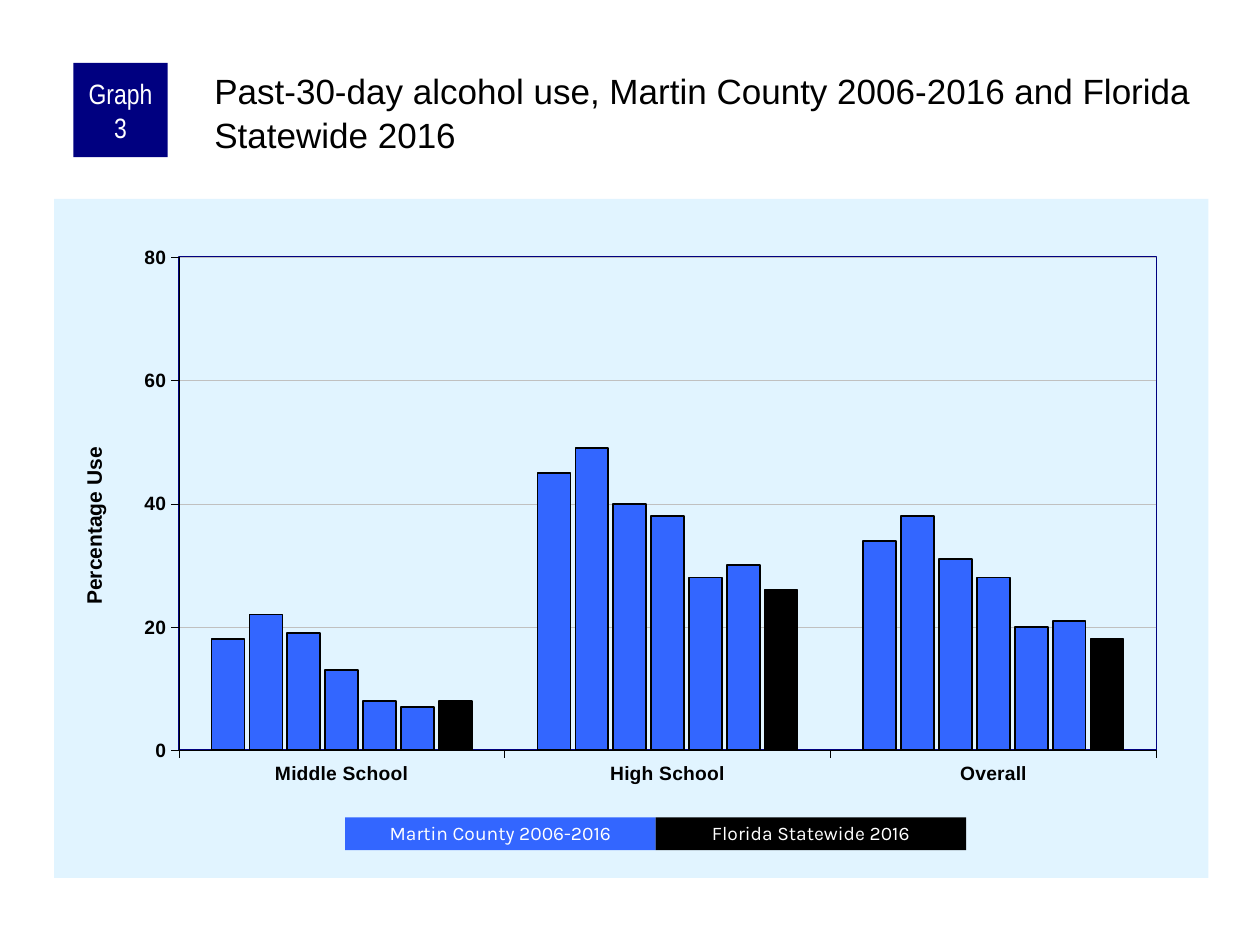
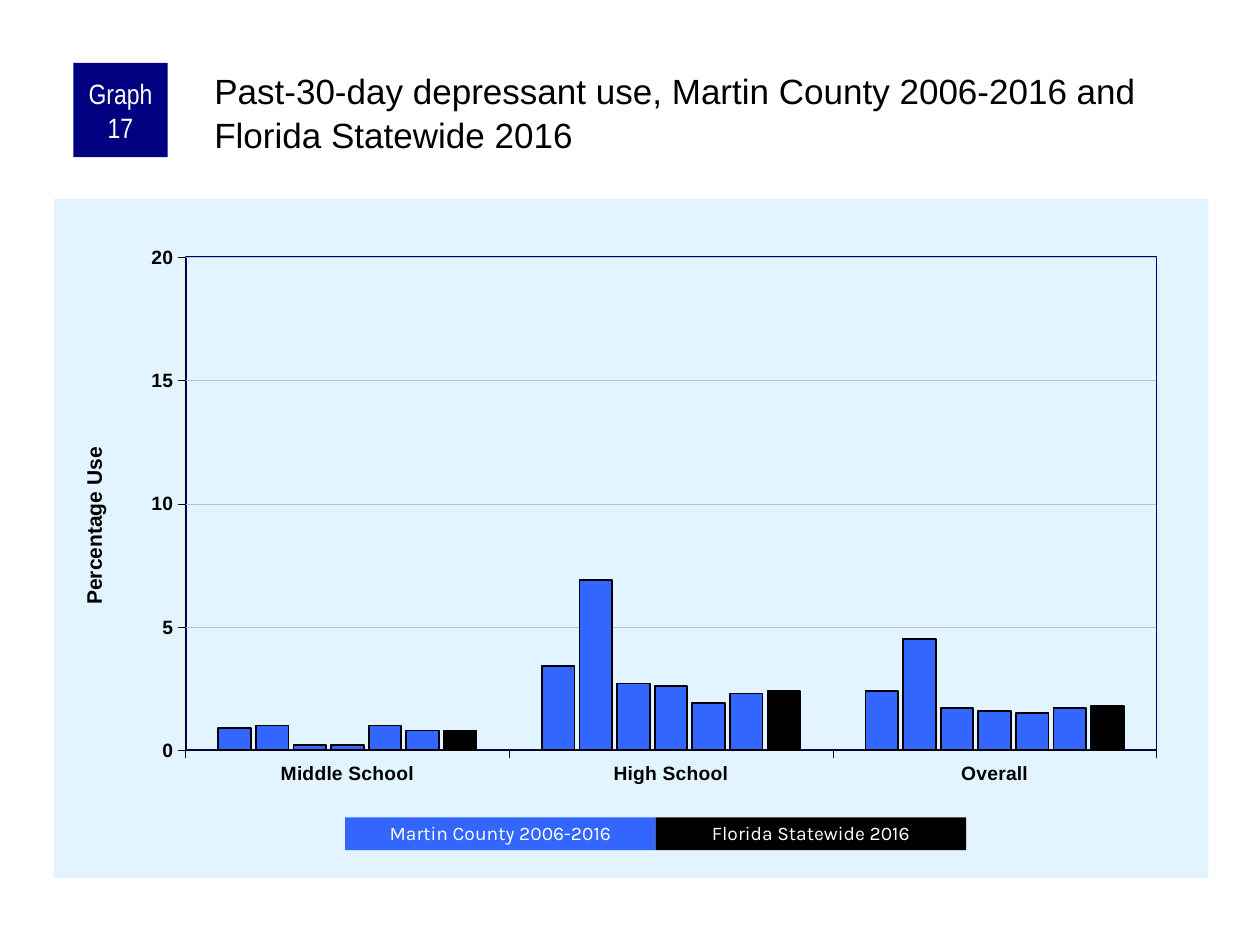
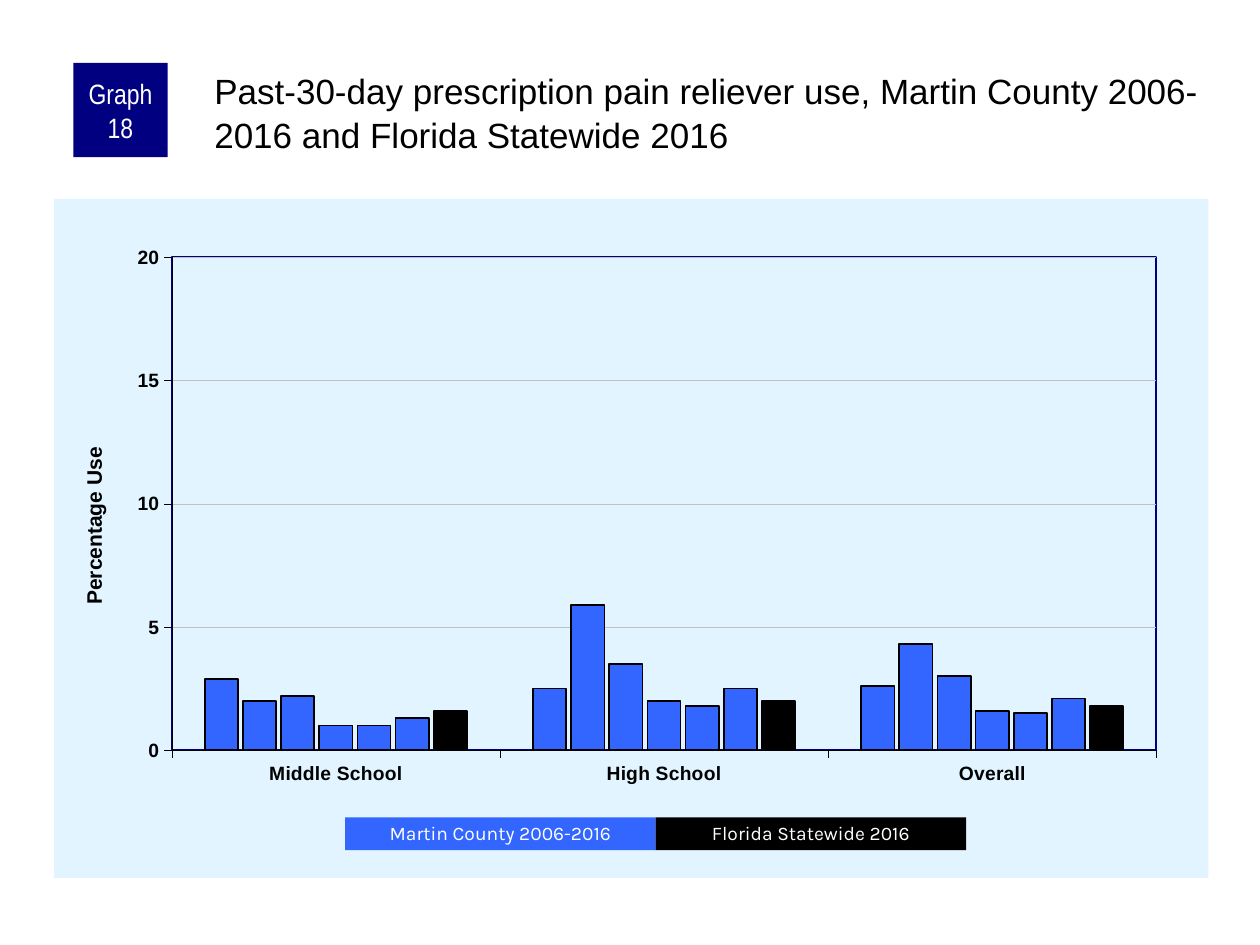
"""Build three slides of column charts on past-30-day substance use."""
from lxml import etree
from pptx import Presentation
from pptx import util as u
from pptx.chart.data import CategoryChartData
from pptx.dml.color import RGBColor
from pptx.enum import chart as charts, shapes, text
from pptx.oxml import parse_xml
from pptx.oxml.ns import nsdecls, qn

COLOURS = {
    "ink": "000000",
    "paper": "FFFFFF",
    "badge": "000080",
    "county": "3366FF",
    "state": "000000",
    "panel": "E1F4FF",
    "grid": "C0C0C0",
}
LEVELS = ["Middle School", "High School", "Overall"]
LEGEND = [("Martin County 2006-2016", "county"), ("Florida Statewide 2016", "state")]
GRAPHS = [
    {
        "number": 3, "substance": "alcohol", "top": 80, "step": 20, "plot_left": 0.108,
        "surveys": [(18, 45, 34), (22, 49, 38), (19, 40, 31), (13, 38, 28),
                    (8, 28, 20), (7, 30, 21), (8, 26, 18)],
    },
    {
        "number": 17, "substance": "depressant", "top": 20, "step": 5, "plot_left": 0.114,
        "surveys": [(0.9, 3.4, 2.4), (1, 6.9, 4.5), (0.2, 2.7, 1.7), (0.2, 2.6, 1.6),
                    (1, 1.9, 1.5), (0.8, 2.3, 1.7), (0.8, 2.4, 1.8)],
    },
    {
        "number": 18, "substance": "prescription pain reliever", "top": 20, "step": 5,
        "plot_left": 0.102,
        "surveys": [(2.9, 2.5, 2.6), (2, 5.9, 4.3), (2.2, 3.5, 3), (1, 2, 1.6),
                    (1, 1.8, 1.5), (1.3, 2.5, 2.1), (1.6, 2, 1.8)],
    },
]
PLOT_RIGHT = 0.955


def rgb(name):
    """Return the named colour."""
    return RGBColor.from_string(COLOURS[name])


def style_font(font, size, colour="ink", face="Arial", bold=False):
    """Set the look of a font."""
    font.size, font.name, font.bold = u.Pt(size), face, bold
    font.color.rgb = rgb(colour)


def write(frame, content, align=None, spacing=None, **font_format):
    """Write one formatted paragraph into a text frame."""
    frame.text = content
    paragraph = frame.paragraphs[0]
    paragraph.alignment = align
    paragraph.line_spacing = spacing
    style_font(paragraph.runs[0].font, **font_format)


def set_margins(frame, left, top, right, bottom):
    """Set the four text margins in centimetres."""
    frame.margin_left, frame.margin_top = u.Cm(left), u.Cm(top)
    frame.margin_right, frame.margin_bottom = u.Cm(right), u.Cm(bottom)


def add_box(slide, left, top, width, height, fill, content, **text_format):
    """Add a filled rectangle with centred text and return its text frame."""
    box = slide.shapes.add_shape(shapes.MSO_SHAPE.RECTANGLE, u.Cm(left), u.Cm(top),
                                 u.Cm(width), u.Cm(height))
    box.shadow.inherit = False
    box.fill.solid()
    box.fill.fore_color.rgb = rgb(fill)
    box.line.fill.background()
    frame = box.text_frame
    frame.word_wrap = True
    frame.vertical_anchor = text.MSO_ANCHOR.MIDDLE
    write(frame, content, align=text.PP_ALIGN.CENTER, colour="paper", **text_format)
    return frame


def set_title(slide, content):
    """Place and format the slide title."""
    title = slide.shapes.title
    title.left, title.top = u.Cm(4.24), u.Cm(1.27)
    title.width, title.height = u.Cm(20.12), u.Cm(2.11)
    frame = title.text_frame
    frame.word_wrap = True
    frame.auto_size = text.MSO_AUTO_SIZE.NONE
    frame.vertical_anchor = text.MSO_ANCHOR.TOP
    set_margins(frame, 0.08, 0.08, 0, 0)
    write(frame, content, align=text.PP_ALIGN.LEFT, spacing=1.05, size=20)


def set_layout(parent, index, **settings):
    """Give a chart part a manual layout."""
    for old in parent.findall(qn("c:layout")):
        parent.remove(old)
    layout = parse_xml(f"<c:layout {nsdecls('c')}><c:manualLayout/></c:layout>")
    for tag, value in settings.items():
        etree.SubElement(layout[0], qn(f"c:{tag}")).set("val", str(value))
    parent.insert(index, layout)


def area_format(fill, line):
    """Return the fill and outline of a chart area."""
    return parse_xml(f"<c:spPr {nsdecls('c', 'a')}>{fill}<a:ln w='12700'>{line}</a:ln></c:spPr>")


def solid(name):
    """Return a solid fill element as text."""
    return f"<a:solidFill><a:srgbClr val='{COLOURS[name]}'/></a:solidFill>"


def style_axis(axis):
    """Format the line, ticks and labels shared by both axes."""
    axis.major_tick_mark = charts.XL_TICK_MARK.OUTSIDE
    axis.minor_tick_mark = charts.XL_TICK_MARK.NONE
    axis.format.line.color.rgb = rgb("ink")
    axis.format.line.width = u.Pt(0.25)
    style_font(axis.tick_labels.font, 11, bold=True)


def style_value_axis(axis, top, step):
    """Format the percentage axis, its grid and its title."""
    style_axis(axis)
    axis.minimum_scale, axis.maximum_scale, axis.major_unit = 0, top, step
    axis.has_major_gridlines = True
    axis.major_gridlines.format.line.color.rgb = rgb("grid")
    axis.major_gridlines.format.line.width = u.Pt(0.25)
    axis_title = axis.axis_title
    write(axis_title.text_frame, "Percentage Use", size=12, bold=True)
    for body in axis_title.element.iter(qn("a:bodyPr")):
        body.set("rot", "-5400000")
        body.set("vert", "horz")
    set_layout(axis_title.element, 1, xMode="edge", yMode="edge", x=0.02, y=0.36)


def add_use_chart(slide, graph):
    """Add the clustered columns of one graph."""
    data = CategoryChartData()
    data.categories = LEVELS
    for number, shares in enumerate(graph["surveys"], 1):
        data.add_series(f"Series {number}", shares)
    chart = slide.shapes.add_chart(charts.XL_CHART_TYPE.COLUMN_CLUSTERED, u.Cm(1.09), u.Cm(4.01),
                                   u.Cm(23.27), u.Cm(13.69), data).chart
    chart.has_legend = chart.has_title = False
    style_font(chart.font, 8)
    columns = chart.plots[0]
    columns.gap_width, columns.overlap, columns.vary_by_categories = 200, -15, False
    for survey in columns.series:
        survey.format.fill.solid()
        is_state = survey.index == len(graph["surveys"]) - 1
        survey.format.fill.fore_color.rgb = rgb("state" if is_state else "county")
        survey.format.line.color.rgb = rgb("ink")
        survey.format.line.width = u.Pt(1)
    style_axis(chart.category_axis)
    style_value_axis(chart.value_axis, graph["top"], graph["step"])
    chart_root = chart.element.find(qn("c:chart"))
    chart_root.addnext(area_format(solid("panel"), "<a:noFill/>"))
    plot_area = chart_root.find(qn("c:plotArea"))
    plot_area.append(area_format("<a:noFill/>", solid("badge")))
    left = graph["plot_left"]
    set_layout(plot_area, 0, layoutTarget="inner", xMode="edge", yMode="edge",
               x=left, y=0.086, w=round(PLOT_RIGHT - left, 3), h=0.726)


def add_graph_slide(deck, graph):
    """Add a slide with badge, title, chart and legend."""
    slide = deck.slides.add_slide(deck.slide_layouts[5])
    set_title(slide, f"Past-30-day {graph['substance']} use, Martin County 2006-2016 "
                     "and Florida Statewide 2016")
    add_use_chart(slide, graph)
    badge = add_box(slide, 1.48, 1.27, 1.9, 1.9, "badge", f"Graph {graph['number']}",
                    size=16, face="Arial Narrow")
    set_margins(badge, 0.13, 0, 0.13, 0)
    for position, (label, fill) in enumerate(LEGEND):
        add_box(slide, 6.96 + position * 6.26, 16.48, 6.26, 0.66, fill, label,
                size=11, face="Karla", spacing=0.9)


def main():
    """Build and save the deck."""
    deck = Presentation()
    deck.slide_width, deck.slide_height = u.Cm(25.4), u.Cm(19.05)
    for graph in GRAPHS:
        add_graph_slide(deck, graph)
    deck.save("out.pptx")


if __name__ == "__main__":
    main()
